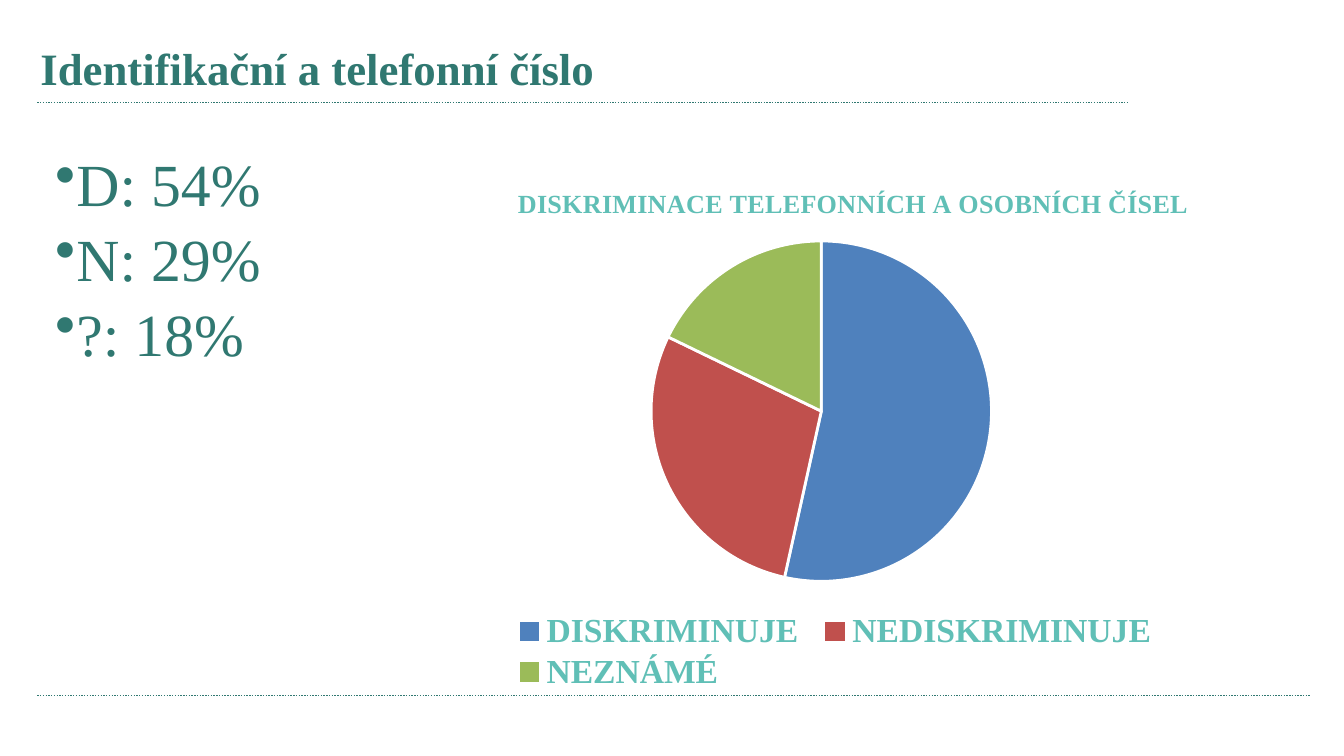
from dataclasses import dataclass

import lxml.etree
import pptx
import pptx.chart.data
import pptx.dml.color
import pptx.enum.chart
import pptx.enum.dml
import pptx.enum.shapes
import pptx.enum.text
import pptx.oxml
import pptx.oxml.ns
import pptx.util

Pt = pptx.util.Pt
qn = pptx.oxml.ns.qn

FONT = "Times New Roman"
COLORS = {
    "teal": "307871",
    "mint": "60BFB6",
    "blue": "4F81BD",
    "red": "C0504D",
    "green": "9BBB59",
    "white": "FFFFFF",
}


@dataclass
class Rule:
    left: float
    right: float
    top: float


@dataclass
class Answer:
    short: str
    label: str
    percent: int
    color: str


RULES = [Rule(20, 604, 55), Rule(20, 702, 372.5)]
ANSWERS = [
    Answer("D", "DISKRIMINUJE", 54, "blue"),
    Answer("N", "NEDISKRIMINUJE", 29, "red"),
    Answer("?", "NEZNÁMÉ", 18, "green"),
]


def rgb(name: str) -> pptx.dml.color.RGBColor:
    return pptx.dml.color.RGBColor.from_string(COLORS[name])


def format_font(font, size: float, color: str, bold: bool = False) -> None:
    for attribute, value in {"name": FONT, "size": Pt(size), "bold": bold}.items():
        setattr(font, attribute, value)
    font.color.rgb = rgb(color)


def place(shape, left: float, top: float, width: float, height: float) -> None:
    box = {"left": left, "top": top, "width": width, "height": height}
    for attribute, value in box.items():
        setattr(shape, attribute, Pt(value))


def draw_rule(slide, rule: Rule) -> None:
    line = slide.shapes.add_connector(
        pptx.enum.shapes.MSO_CONNECTOR.STRAIGHT,
        Pt(rule.left), Pt(rule.top), Pt(rule.right), Pt(rule.top),
    )
    line.line.color.rgb = rgb("teal")
    line.line.width = Pt(0.75)
    line.line.dash_style = pptx.enum.dml.MSO_LINE.ROUND_DOT
    lxml.etree.SubElement(line._element.spPr, qn("a:effectLst"))


def draw_title(slide, wording: str) -> None:
    title = slide.shapes.title
    place(title, 14.4, 13.5, 561.6, 45)
    title.text_frame.text = wording
    title.text_frame.vertical_anchor = pptx.enum.text.MSO_ANCHOR.MIDDLE
    paragraph = title.text_frame.paragraphs[0]
    paragraph.alignment = pptx.enum.text.PP_ALIGN.LEFT
    format_font(paragraph.runs[0].font, 24, "teal", bold=True)


def draw_answers(slide, answers: list[Answer]) -> None:
    frame = slide.shapes.add_textbox(Pt(22.5), Pt(75), Pt(674.5), Pt(286)).text_frame
    frame.word_wrap = True
    for index, answer in enumerate(answers):
        paragraph = frame.add_paragraph() if index else frame.paragraphs[0]
        paragraph.alignment = pptx.enum.text.PP_ALIGN.JUSTIFY
        if index:
            paragraph.space_before = Pt(1.8)
        properties = paragraph._p.get_or_add_pPr()
        properties.set("marL", "0")
        properties.set("indent", "0")
        lxml.etree.SubElement(properties, qn("a:buChar"), char="•")
        run = paragraph.add_run()
        run.text = f"{answer.short}: {answer.percent}%"
        format_font(paragraph.font, 32, "teal")
        format_font(run.font, 32, "teal")


def set_layout(element, target: str = "", **fractions: float) -> None:
    """Fix a chart part at fractions of the chart's width and height."""
    for old in element.findall(qn("c:layout")):
        element.remove(old)
    layout = pptx.oxml.parse_xml(
        f'<c:layout {pptx.oxml.ns.nsdecls("c")}><c:manualLayout/></c:layout>'
    )
    values = {"layoutTarget": target} if target else {}
    values |= {"xMode": "edge", "yMode": "edge"} | fractions
    for tag, value in values.items():
        lxml.etree.SubElement(layout[0], qn(f"c:{tag}"), val=str(value))
    leaders = [
        child for child in element if child.tag in (qn("c:tx"), qn("c:legendPos"))
    ]
    element.insert(len(leaders), layout)


def draw_pie(slide, heading: str, answers: list[Answer]) -> None:
    data = pptx.chart.data.CategoryChartData()
    data.categories = [answer.label for answer in answers]
    data.add_series("Series 1", [answer.percent for answer in answers])
    chart = slide.shapes.add_chart(
        pptx.enum.chart.XL_CHART_TYPE.PIE, Pt(196), Pt(85.7), Pt(493), Pt(289.5), data
    ).chart
    format_font(chart.font, 10, "teal")

    chart.has_title = True
    chart.chart_title.include_in_layout = False
    chart.chart_title.text_frame.text = heading
    heading_run = chart.chart_title.text_frame.paragraphs[0].runs[0]
    format_font(heading_run.font, 14, "mint", bold=True)
    set_layout(chart.chart_title._element, x=0.16, y=0.04)

    chart.has_legend = True
    chart.legend.position = pptx.enum.chart.XL_LEGEND_POSITION.BOTTOM
    chart.legend.include_in_layout = False
    format_font(chart.legend.font, 18, "mint", bold=True)
    set_layout(chart.legend._element, x=0.15, y=0.83, w=0.72, h=0.16)

    plot = chart.plots[0]
    plot.vary_by_categories = True
    set_layout(plot._element.getparent(), "inner", x=0.31, y=0.15, w=0.37, h=0.63)
    for index, answer in enumerate(answers):
        slice_format = plot.series[0].points[index].format
        slice_format.fill.solid()
        slice_format.fill.fore_color.rgb = rgb(answer.color)
        slice_format.line.color.rgb = rgb("white")
        slice_format.line.width = Pt(1.5)


def main() -> None:
    deck = pptx.Presentation()
    deck.slide_width, deck.slide_height = Pt(720), Pt(405)
    slide = deck.slides.add_slide(deck.slide_layouts.get_by_name("Title Only"))
    for rule in RULES:
        draw_rule(slide, rule)
    draw_answers(slide, ANSWERS)
    draw_title(slide, "Identifikační a telefonní číslo")
    draw_pie(slide, "DISKRIMINACE TELEFONNÍCH A OSOBNÍCH ČÍSEL", ANSWERS)
    deck.save("out.pptx")


if __name__ == "__main__":
    main()
